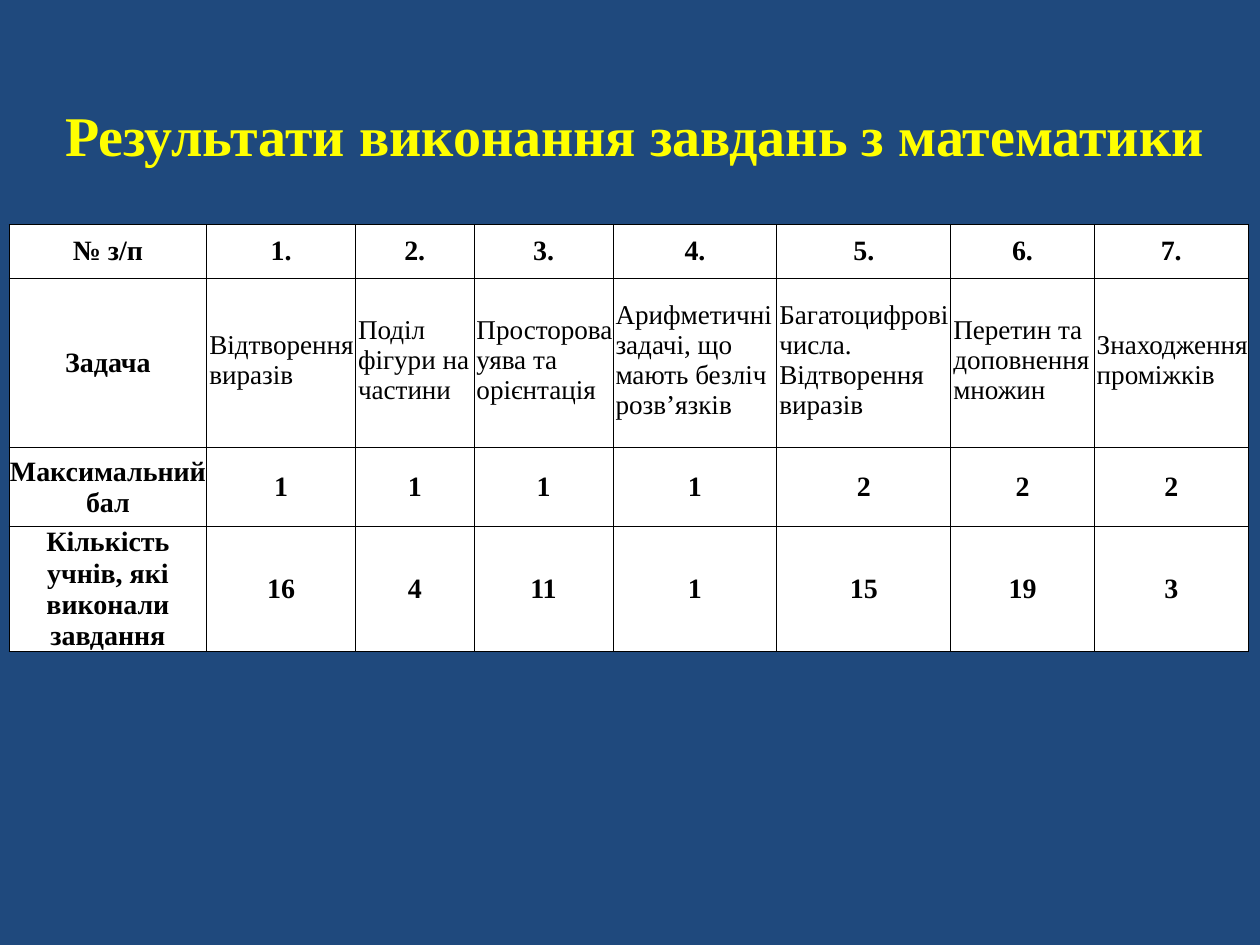
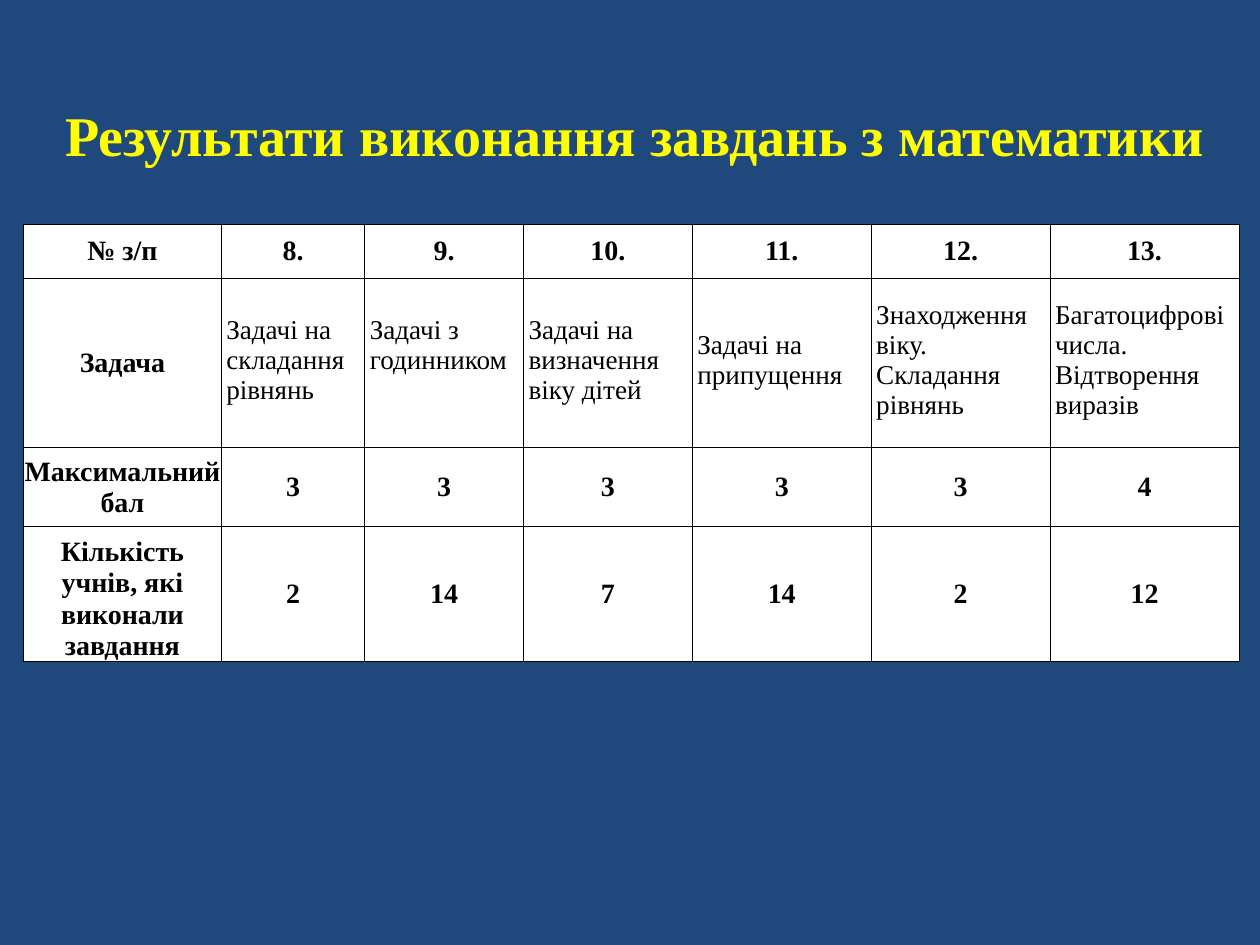
from dataclasses import dataclass

from lxml import etree
from pptx import Presentation
from pptx import util as u
from pptx.dml import color
from pptx.enum import text
from pptx.oxml import ns

Pt = u.Pt
FONT = "Times New Roman"
COLORS = {"background": "1F497D", "title": "FFFF00", "cell": "FFFFFF", "ink": "000000"}
TITLE = "Результати виконання завдань з математики"
ROW_LABELS = ("№ з/п", "Задача", "Максимальний бал", "Кількість учнів, які виконали завдання")
ROW_HEIGHTS = (31, 96.5, 45.4, 70.8)
LABEL_WIDTH = 113
TABLE_TOP = 128.2
TASK_ROW = 1


@dataclass(frozen=True)
class Task:
    name: str
    max_score: int
    solved_by: int
    width: float
    bottom: float = 2.9


@dataclass(frozen=True)
class ResultsTable:
    left: float
    first_number: int
    inset_left: float
    inset_right: float
    tasks: tuple[Task, ...]


RESULTS = (
    ResultsTable(5.2, 1, 1.44, 0, (
        Task("Відтворення виразів", 1, 16, 85),
        Task("Поділ фігури на частини", 1, 4, 67.7),
        Task("Просторова уява та орієнтація", 1, 11, 79.5),
        Task("Арифметичні задачі, що мають безліч розв’язків", 1, 1, 93.6),
        Task("Багатоцифрові числа. Відтворення виразів", 2, 15, 99.4),
        Task("Перетин та доповнення множин", 2, 19, 82),
        Task("Знаходження проміжків", 2, 3, 88),
    )),
    ResultsTable(13.5, 8, 2.9, 2.9, (
        Task("Задачі на складання рівнянь", 3, 2, 82),
        Task("Задачі з годинником", 3, 14, 90.7, bottom=20),
        Task("Задачі на визначення віку дітей", 3, 7, 96.5),
        Task("Задачі на припущення", 3, 14, 102.2),
        Task("Знаходження віку. Складання рівнянь", 3, 2, 102.2),
        Task("Багатоцифрові числа. Відтворення виразів", 4, 12, 108),
    )),
)


def rgb(name: str) -> color.RGBColor:
    return color.RGBColor.from_string(COLORS[name])


def style_run(run, size: float, color_name: str, bold: bool = True) -> None:
    run.font.name = FONT
    run.font.size = Pt(size)
    run.font.bold = bold
    run.font.color.rgb = rgb(color_name)


def add_borders(cell) -> None:
    properties = cell._tc.get_or_add_tcPr()
    for index, side in enumerate(("lnL", "lnR", "lnT", "lnB")):
        line = etree.Element(ns.qn(f"a:{side}"), w=str(Pt(0.5)))
        fill = etree.SubElement(line, ns.qn("a:solidFill"))
        etree.SubElement(fill, ns.qn("a:srgbClr"), val=COLORS["ink"])
        properties.insert(index, line)


def fill_cell(cell, content: str, is_task: bool = False,
              margins: tuple[float, float, float] = (0, 0, 0)) -> None:
    cell.margin_left, cell.margin_right, cell.margin_bottom = map(Pt, margins)
    cell.margin_top = 0
    cell.vertical_anchor = text.MSO_ANCHOR.MIDDLE
    cell.fill.solid()
    cell.fill.fore_color.rgb = rgb("cell")
    add_borders(cell)
    cell.text_frame.text = content
    paragraph = cell.text_frame.paragraphs[0]
    paragraph.alignment = text.PP_ALIGN.LEFT if is_task else text.PP_ALIGN.CENTER
    style_run(paragraph.runs[0], 15.5 if is_task else 16, "ink", bold=not is_task)


def add_title(slide) -> None:
    box = slide.shapes.add_textbox(Pt(30.2), Pt(54), Pt(671.8), Pt(46))
    frame = box.text_frame
    frame.word_wrap = False
    frame.auto_size = text.MSO_AUTO_SIZE.SHAPE_TO_FIT_TEXT
    frame.text = TITLE
    style_run(frame.paragraphs[0].runs[0], 32, "title")


def add_results(slide, results: ResultsTable) -> None:
    widths = [LABEL_WIDTH] + [task.width for task in results.tasks]
    table = slide.shapes.add_table(
        len(ROW_LABELS), len(widths), Pt(results.left), Pt(TABLE_TOP),
        Pt(sum(widths)), Pt(sum(ROW_HEIGHTS))).table
    for column, width in zip(table.columns, widths):
        column.width = Pt(width)
    for row, height in zip(table.rows, ROW_HEIGHTS):
        row.height = Pt(height)

    # Row labels
    for row, label in enumerate(ROW_LABELS):
        fill_cell(table.cell(row, 0), label)
    table.cell(len(ROW_LABELS) - 1, 0).vertical_anchor = text.MSO_ANCHOR.BOTTOM

    # One column per task
    for column, task in enumerate(results.tasks, start=1):
        number = f"{results.first_number + column - 1}."
        values = (number, task.name, str(task.max_score), str(task.solved_by))
        for row, value in enumerate(values):
            if row == TASK_ROW:
                margins = (results.inset_left, results.inset_right, task.bottom)
                fill_cell(table.cell(row, column), value, True, margins)
            else:
                fill_cell(table.cell(row, column), value)


def main() -> None:
    presentation = Presentation()
    presentation.slide_width, presentation.slide_height = Pt(720), Pt(540)
    for results in RESULTS:
        slide = presentation.slides.add_slide(presentation.slide_layouts[6])
        slide.background.fill.solid()
        slide.background.fill.fore_color.rgb = rgb("background")
        add_results(slide, results)
        add_title(slide)
    presentation.save("out.pptx")


if __name__ == "__main__":
    main()
